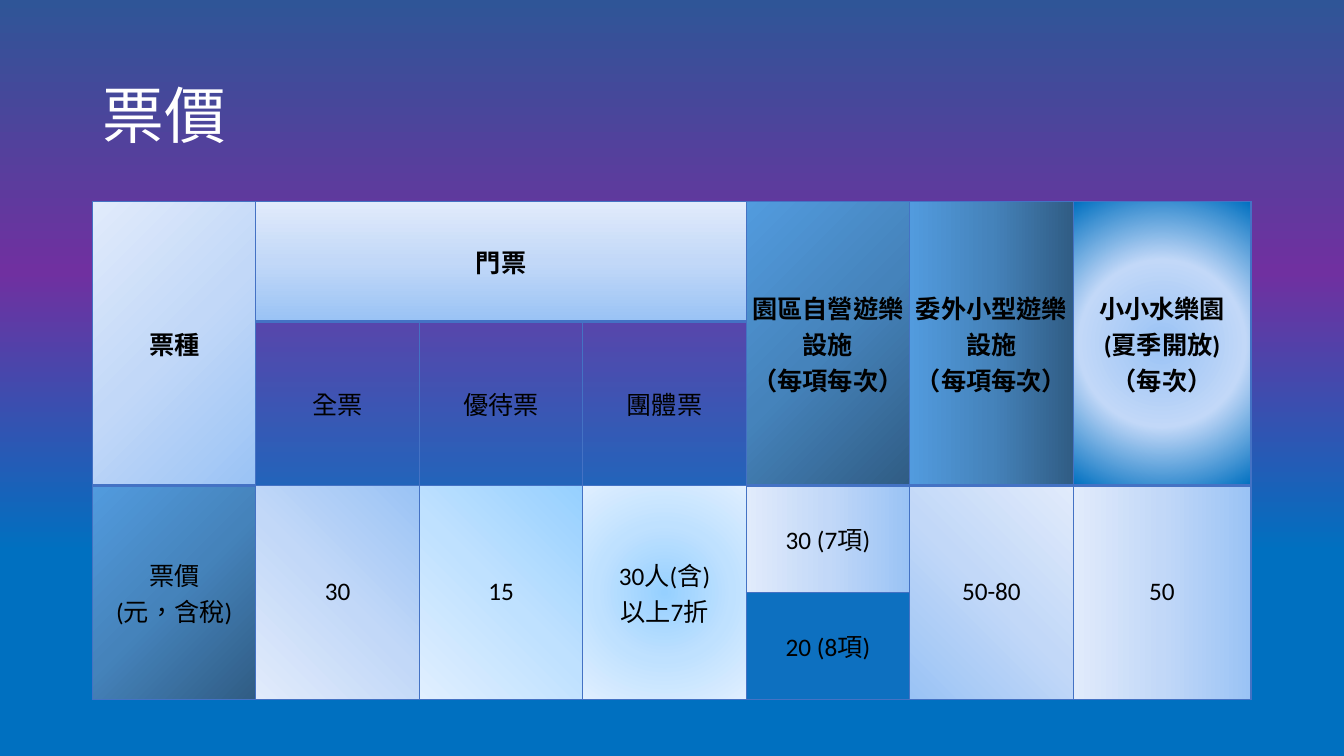
import dataclasses

import lxml.etree
import pptx
import pptx.dml.color
import pptx.enum.text
import pptx.oxml.ns
import pptx.util

Cm = pptx.util.Cm
Pt = pptx.util.Pt
qn = pptx.oxml.ns.qn


@dataclasses.dataclass(frozen=True)
class Theme:
    title_font: str = "Noto Sans CJK JP"
    table_font: str = "Calibri"
    title_size: int = 44
    table_size: int = 18
    title_color: str = "FFFFFF"
    table_color: str = "000000"
    line: str = "4472C4"
    tint_percent: int = 20
    backdrop: tuple = ((27, "0070C0"), (64, "7030A0"), (100, "2F5597"))
    pale: tuple = ((0, "9AC3F5"), (50, "C2D8F8"), (100, "E1EBFB"))
    steel: tuple = ((0, "305C84"), (50, "4583BB"), (100, "529BDE"))
    sky: tuple = ((0, "96D0FF"), (50, "BFE1FF"), (100, "E0EFFF"))
    pool: tuple = ((0, "9AC3F5"), (50, "C2D8F8"), (100, "0070C0"))


THEME = Theme()
CENTER = (50, 50, 50, 50)
TOP_RIGHT = (100, 0, 0, 100)
BOTTOM_LEFT = (0, 100, 100, 0)

COLUMN_WIDTHS = [4.12] * 6 + [4.48]
ROW_HEIGHTS = [3.02, 4.13, 2.69, 2.7]

# row, column, rows spanned, columns spanned, text, stops, angle or focus
PRICE_CELLS = [
    (0, 0, 2, 1, "票種", THEME.pale, 225),
    (0, 1, 1, 3, "門票", THEME.pale, 270),
    (0, 4, 2, 1, "園區自營遊樂設施\v（每項每次）", THEME.steel, 225),
    (0, 5, 2, 1, "委外小型遊樂設施\v（每項每次）", THEME.steel, 180),
    (0, 6, 2, 1, "小小水樂園\v(夏季開放)\v（每次）", THEME.pool, CENTER),
    (1, 1, 1, 1, "全票", None, None),
    (1, 2, 1, 1, "優待票", None, None),
    (1, 3, 1, 1, "團體票", None, None),
    (2, 0, 2, 1, "票價\v(元，含稅)", THEME.steel, 225),
    (2, 1, 2, 1, "30", THEME.pale, TOP_RIGHT),
    (2, 2, 2, 1, "15", THEME.sky, TOP_RIGHT),
    (2, 3, 2, 1, "30人(含)\v以上7折", THEME.sky, CENTER),
    (2, 4, 1, 1, "30 (7項)", THEME.pale, 180),
    (2, 5, 2, 1, "50-80", THEME.pale, BOTTOM_LEFT),
    (2, 6, 2, 1, "50", THEME.pale, 180),
    (3, 4, 1, 1, "20 (8項)", None, None),
]


def add_node(parent, tag, **attributes):
    values = {name: str(value) for name, value in attributes.items()}
    return lxml.etree.SubElement(parent, qn(tag), values)


def set_solid(fill, color):
    fill.solid()
    fill.fore_color.rgb = pptx.dml.color.RGBColor.from_string(color)


def set_gradient(fill, owner, stops, direction):
    set_solid(fill, stops[0][1])
    solid = owner.find(".//" + qn("a:solidFill"))
    gradient = lxml.etree.Element(qn("a:gradFill"), rotWithShape="1")
    stop_list = add_node(gradient, "a:gsLst")
    for position, color in stops:
        stop = add_node(stop_list, "a:gs", pos=position * 1000)
        add_node(stop, "a:srgbClr", val=color)
    if isinstance(direction, tuple):
        shade = add_node(gradient, "a:path", path="circle")
        sides = {side: edge * 1000 for side, edge in zip("ltrb", direction)}
        add_node(shade, "a:fillToRect", **sides)
    else:
        add_node(gradient, "a:lin", ang=direction * 60000, scaled=0)
    solid.getparent().replace(solid, gradient)


def set_tint(fill, owner):
    set_solid(fill, THEME.line)
    color = owner.find(".//" + qn("a:srgbClr"))
    add_node(color, "a:alpha", val=THEME.tint_percent * 1000)


def set_borders(cell, bottom_width):
    properties = cell._tc.get_or_add_tcPr()
    widths = {"a:lnL": 1, "a:lnR": 1, "a:lnT": 1, "a:lnB": bottom_width}
    for index, (tag, width) in enumerate(widths.items()):
        line = add_node(properties, tag, w=Pt(width))
        add_node(add_node(line, "a:solidFill"), "a:srgbClr", val=THEME.line)
        properties.insert(index, line)


def format_text(frame, font, size, color, alignment, bold=False):
    frame.vertical_anchor = pptx.enum.text.MSO_ANCHOR.MIDDLE
    for para in frame.paragraphs:
        para.alignment = alignment
        for span in para.runs:
            span.font.size = Pt(size)
            span.font.bold = bold
            span.font.name = font
            span.font.color.rgb = pptx.dml.color.RGBColor.from_string(color)
            properties = span._r.get_or_add_rPr()
            properties.set("lang", "zh-TW")
            add_node(properties, "a:ea", typeface=THEME.title_font)


def place_title(page, text, left, top, width, height):
    title = page.shapes.title
    title.left, title.top, title.width, title.height = left, top, width, height
    title.text_frame.text = text
    title.text_frame.paragraphs[0].line_spacing = 0.9
    format_text(title.text_frame, THEME.title_font, THEME.title_size,
                THEME.title_color, pptx.enum.text.PP_ALIGN.LEFT)


def fill_price_cell(cell, text, stops, direction, bold):
    cell.text_frame.text = text
    format_text(cell.text_frame, THEME.table_font, THEME.table_size,
                THEME.table_color, pptx.enum.text.PP_ALIGN.CENTER, bold)
    cell.vertical_anchor = pptx.enum.text.MSO_ANCHOR.MIDDLE
    if stops:
        set_gradient(cell.fill, cell._tc.tcPr, stops, direction)
    else:
        set_tint(cell.fill, cell._tc.tcPr)


def place_price_table(page, left, top, width, height):
    table = page.shapes.add_table(len(ROW_HEIGHTS), len(COLUMN_WIDTHS),
                                  left, top, width, height).table
    table.first_row = False
    table.horz_banding = False
    for column, share in zip(table.columns, COLUMN_WIDTHS):
        column.width = int(width * share / sum(COLUMN_WIDTHS))
    for row, share in zip(table.rows, ROW_HEIGHTS):
        row.height = int(height * share / sum(ROW_HEIGHTS))
    for cell in table.iter_cells():
        cell.margin_left = cell.margin_right = Cm(0.08)
        cell.margin_top = cell.margin_bottom = Cm(0.08)
        cell.fill.background()
    for row, column, rows, columns, text, stops, direction in PRICE_CELLS:
        cell = table.cell(row, column)
        if rows * columns > 1:
            cell.merge(table.cell(row + rows - 1, column + columns - 1))
        fill_price_cell(cell, text, stops, direction, bold=row == 0)
    for index, cell in enumerate(table.iter_cells()):
        set_borders(cell, 2 if index < len(COLUMN_WIDTHS) else 1)


def build_price_page(deck):
    page = deck.slides.add_slide(deck.slide_layouts[5])
    set_gradient(page.background.fill, page.element, THEME.backdrop, 270)
    left, width = Cm(2.33), Cm(29.2)
    place_title(page, "票價", left, Cm(1.14), width, Cm(3.68))
    place_price_table(page, left, Cm(5.08), width, Cm(12.54))


def main():
    deck = pptx.Presentation()
    deck.slide_width = Cm(33.87)
    deck.slide_height = Cm(19.05)
    build_price_page(deck)
    deck.save("out.pptx")


if __name__ == "__main__":
    main()
